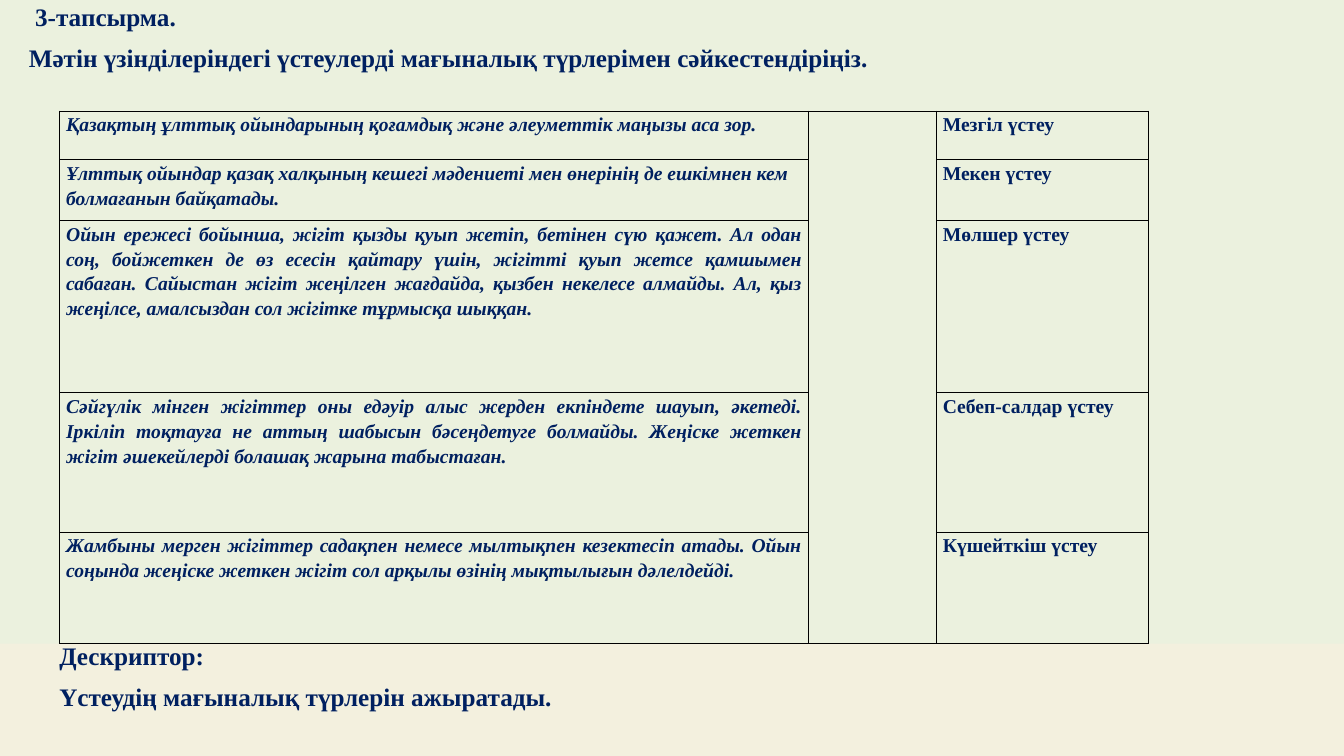
import pptx
import pptx.dml.color
import pptx.enum.shapes
import pptx.enum.text
import pptx.oxml
import pptx.oxml.ns
import pptx.util

COLORS = {"background": "F3F0DE", "panel": "EBF1DE", "text": "002060", "border": "000000"}
ALIGN = pptx.enum.text.PP_ALIGN

MATCHES = [
    ("Қазақтың ұлттық ойындарының қоғамдық және әлеуметтік маңызы аса зор.",
     "Мезгіл үстеу", ALIGN.LEFT, 46),
    ("Ұлттық ойындар қазақ халқының кешегі мәдениеті мен өнерінің де ешкімнен кем "
     "болмағанын байқатады.",
     "Мекен үстеу", ALIGN.LEFT, 58),
    ("Ойын ережесі бойынша, жігіт қызды қуып жетіп, бетінен сүю қажет. Ал одан соң, "
     "бойжеткен де өз есесін қайтару үшін, жігітті қуып жетсе қамшымен сабаған. "
     "Сайыстан жігіт жеңілген жағдайда, қызбен некелесе алмайды. Ал, қыз жеңілсе, "
     "амалсыздан сол жігітке тұрмысқа шыққан.",
     "Мөлшер үстеу", ALIGN.JUSTIFY, 164),
    ("Сәйгүлік мінген жігіттер оны едәуір алыс жерден екпіндете шауып, әкетеді. "
     "Іркіліп тоқтауға не аттың шабысын бәсеңдетуге болмайды. Жеңіске жеткен жігіт "
     "әшекейлерді болашақ жарына табыстаған.",
     "Себеп-салдар үстеу", ALIGN.JUSTIFY, 133),
    ("Жамбыны мерген жігіттер садақпен немесе мылтықпен кезектесіп атады. Ойын "
     "соңында жеңіске жеткен жігіт сол арқылы өзінің мықтылығын дәлелдейді.",
     "Күшейткіш үстеу", ALIGN.JUSTIFY, 106),
]
COLUMN_WIDTHS = [713, 122, 202]


def px(length):
    return pptx.util.Emu(length * 9525)


def color(name):
    return pptx.dml.color.RGBColor.from_string(COLORS[name])


class TaskSlide:
    """Holds the text style and the slide being built."""

    font = "Times New Roman"

    def __init__(self, presentation):
        self.slide = presentation.slides.add_slide(presentation.slide_layouts[6])
        fill = self.slide.background.fill
        fill.solid()
        fill.fore_color.rgb = color("background")

    def add_run(self, paragraph, text, size, italic=False):
        run = paragraph.add_run()
        run.text = text
        run.font.name = self.font
        run.font.size = pptx.util.Pt(size)
        run.font.bold = True
        run.font.italic = italic
        run.font.color.rgb = color("text")

    def add_lines(self, frame, lines):
        frame.word_wrap = True
        frame.vertical_anchor = pptx.enum.text.MSO_ANCHOR.TOP
        for index, (text, indent) in enumerate(lines):
            paragraph = frame.add_paragraph() if index else frame.paragraphs[0]
            paragraph.alignment = ALIGN.LEFT
            paragraph.line_spacing = 0.9
            paragraph.space_before = pptx.util.Pt(10 if index else 0)
            paragraph._p.get_or_add_pPr().set("marL", str(px(indent)))
            self.add_run(paragraph, text, 18)

    def add_panel(self, left, top, width, height, lines):
        shape = self.slide.shapes.add_shape(
            pptx.enum.shapes.MSO_SHAPE.RECTANGLE, px(left), px(top), px(width), px(height))
        shape.shadow.inherit = False
        shape.fill.solid()
        shape.fill.fore_color.rgb = color("panel")
        shape.line.fill.background()
        self.add_lines(shape.text_frame, lines)

    def add_text(self, left, top, width, height, lines):
        shape = self.slide.shapes.add_textbox(px(left), px(top), px(width), px(height))
        self.add_lines(shape.text_frame, lines)

    def style_cell(self, cell):
        cell.margin_left = cell.margin_right = px(6)
        cell.margin_top = cell.margin_bottom = 0
        cell.fill.background()
        properties = cell._tc.get_or_add_tcPr()
        for index, side in enumerate(("lnL", "lnR", "lnT", "lnB")):
            border = pptx.oxml.parse_xml(
                f'<a:{side} {pptx.oxml.ns.nsdecls("a")} w="12700"><a:solidFill>'
                f'<a:srgbClr val="{COLORS["border"]}"/></a:solidFill></a:{side}>')
            properties.insert(index, border)

    def fill_cell(self, cell, text, alignment, italic):
        paragraph = cell.text_frame.paragraphs[0]
        paragraph.alignment = alignment
        paragraph.line_spacing = 1.15
        self.add_run(paragraph, text, 14, italic)

    def add_match_table(self, left, top, widths, matches):
        height = sum(match[3] for match in matches)
        table = self.slide.shapes.add_table(
            len(matches), len(widths), px(left), px(top), px(sum(widths)), px(height)).table
        table.first_row = False
        table.horz_banding = False
        for column, width in zip(table.columns, widths):
            column.width = px(width)
        for cell in table.iter_cells():
            self.style_cell(cell)
        for index, (excerpt, adverb, alignment, row_height) in enumerate(matches):
            table.rows[index].height = px(row_height)
            self.fill_cell(table.cell(index, 0), excerpt, alignment, True)
            self.fill_cell(table.cell(index, 2), adverb, ALIGN.LEFT, False)
        table.cell(0, 1).merge(table.cell(len(matches) - 1, 1))


def main():
    presentation = pptx.Presentation()
    presentation.slide_width = px(1280)
    presentation.slide_height = px(720)
    task = TaskSlide(presentation)
    task.add_panel(0, 0, 1280, 613, [
        ("3-тапсырма.", 24),
        ("Мәтін үзінділеріндегі үстеулерді мағыналық түрлерімен сәйкестендіріңіз.", 18),
    ])
    task.add_match_table(57, 106, COLUMN_WIDTHS, MATCHES)
    task.add_text(47, 608, 1233, 76, [
        ("Дескриптор:", 0),
        ("Үстеудің мағыналық түрлерін ажыратады.", 0),
    ])
    presentation.save("out.pptx")


if __name__ == "__main__":
    main()
